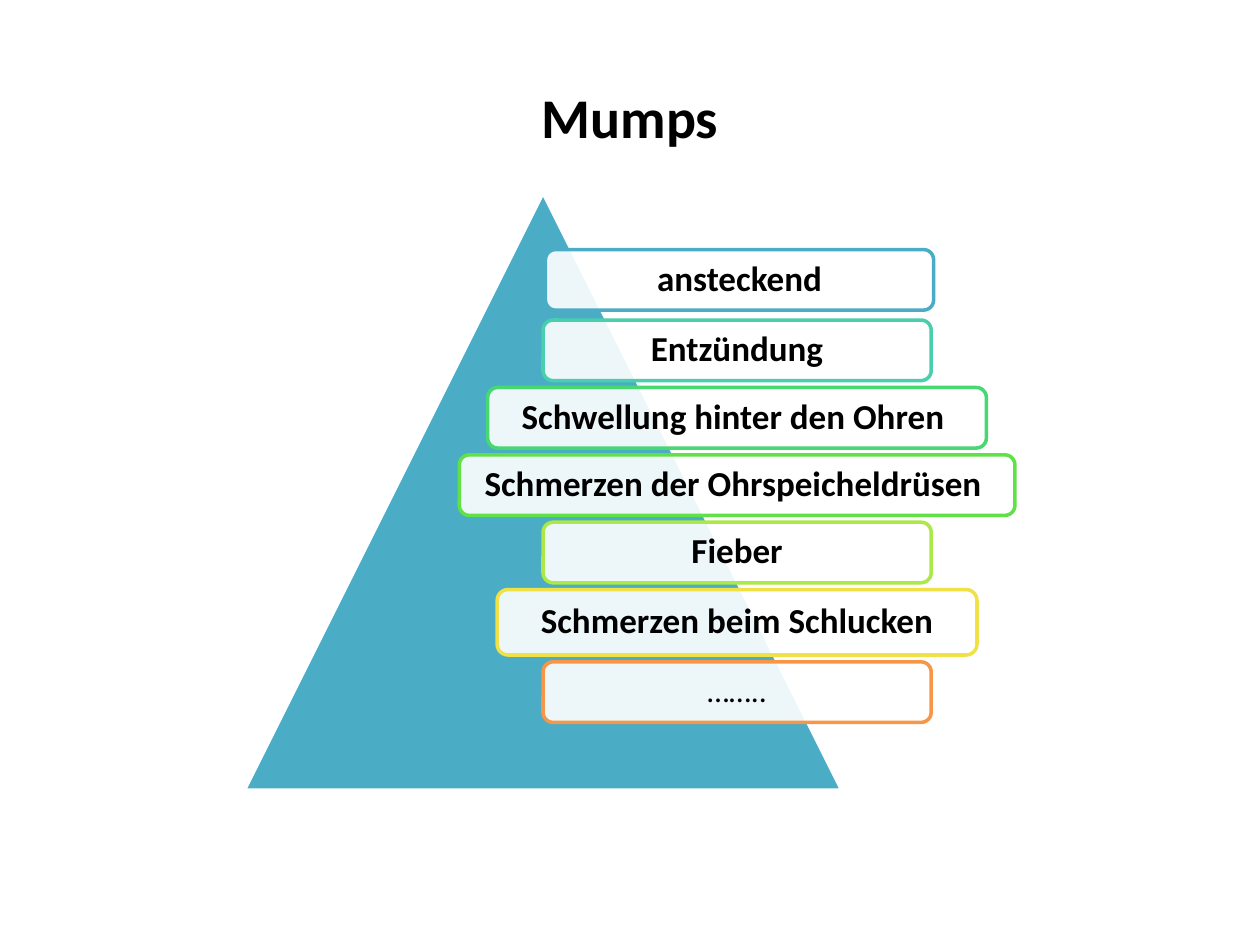
from dataclasses import dataclass

from lxml import etree
from pptx import Presentation
from pptx import util as u
from pptx.dml import color
from pptx.enum import shapes, text
from pptx.oxml import ns

FONT = "Calibri"
BLACK, WHITE, TEAL = "000000", "FFFFFF", "4BACC6"
MID, TOP, GAP = 421.2, 144.4, 3.9
INSET = u.Pt(5.8)
FRAME = {
    "word_wrap": True,
    "vertical_anchor": text.MSO_ANCHOR.MIDDLE,
    "margin_left": INSET,
    "margin_right": INSET,
    "margin_top": INSET,
    "margin_bottom": INSET,
}


@dataclass
class Row:
    label: str
    edge: str
    width: float = 221.8
    height: float = 34.6
    right: float = 0
    down: float = 0
    size: float = 20
    bold: bool = True


ROWS = [
    Row("ansteckend", TEAL, right=1.4, down=-1.8),
    Row("Entzündung", "49CFAE"),
    Row("Schwellung hinter den Ohren ", "47D872", width=285),
    Row("Schmerzen der Ohrspeicheldrüsen ", "60E146", width=317.5),
    Row("Fieber", "ACE946"),
    Row("Schmerzen beim Schlucken", "F0E146", width=274.2, height=37.4),
    Row("……..", "F79646", size=18, bold=False),
]


def tint(code: str) -> color.RGBColor:
    return color.RGBColor.from_string(code)


def apply(item, values: dict) -> None:
    for name, value in values.items():
        setattr(item, name, value)


def write(shape, label: str, size: float, bold: bool, space: float) -> None:
    frame = shape.text_frame
    apply(frame, FRAME)
    para = frame.paragraphs[0]
    apply(para, {"alignment": text.PP_ALIGN.CENTER, "line_spacing": space})
    run = para.add_run()
    run.text = label
    apply(run.font, {"name": FONT, "size": u.Pt(size), "bold": bold})
    run.font.color.rgb = tint(BLACK)


def draw(group, kind, box: tuple, fill: str, edge: str):
    shape = group.shapes.add_shape(kind, *map(u.Pt, box))
    shape.shadow.inherit = False
    shape.fill.solid()
    shape.fill.fore_color.rgb = tint(fill)
    shape.line.color.rgb = tint(edge)
    shape.line.width = u.Pt(2)
    return shape


def fade(shape, percent: int) -> None:
    path = f"{ns.qn('a:solidFill')}/{ns.qn('a:srgbClr')}"
    code = shape.fill._xPr.find(path)
    etree.SubElement(code, ns.qn("a:alpha"), val=str(percent * 1000))


def stack(group, rows: list[Row]) -> None:
    top = TOP
    for row in rows:
        left = MID - row.width / 2 + row.right
        box = (left, top + row.down, row.width, row.height)
        kind = shapes.MSO_SHAPE.ROUNDED_RECTANGLE
        shape = draw(group, kind, box, WHITE, row.edge)
        fade(shape, 90)
        write(shape, row.label, row.size, row.bold, 0.9)
        top += row.height + GAP


def main() -> None:
    deck = Presentation()
    apply(deck, {"slide_width": u.Pt(720), "slide_height": u.Pt(540)})
    slide = deck.slides.add_slide(deck.slide_layouts[6])
    title = slide.shapes.add_textbox(*map(u.Pt, (36, 21.6, 648, 90)))
    write(title, "Mumps", 32, True, 1.0)
    group = slide.shapes.add_group_shape()
    box = (139.7, 110.2, 341.3, 341.3)
    draw(group, shapes.MSO_SHAPE.ISOSCELES_TRIANGLE, box, TEAL, WHITE)
    stack(group, ROWS)
    deck.save("out.pptx")


if __name__ == "__main__":
    main()
